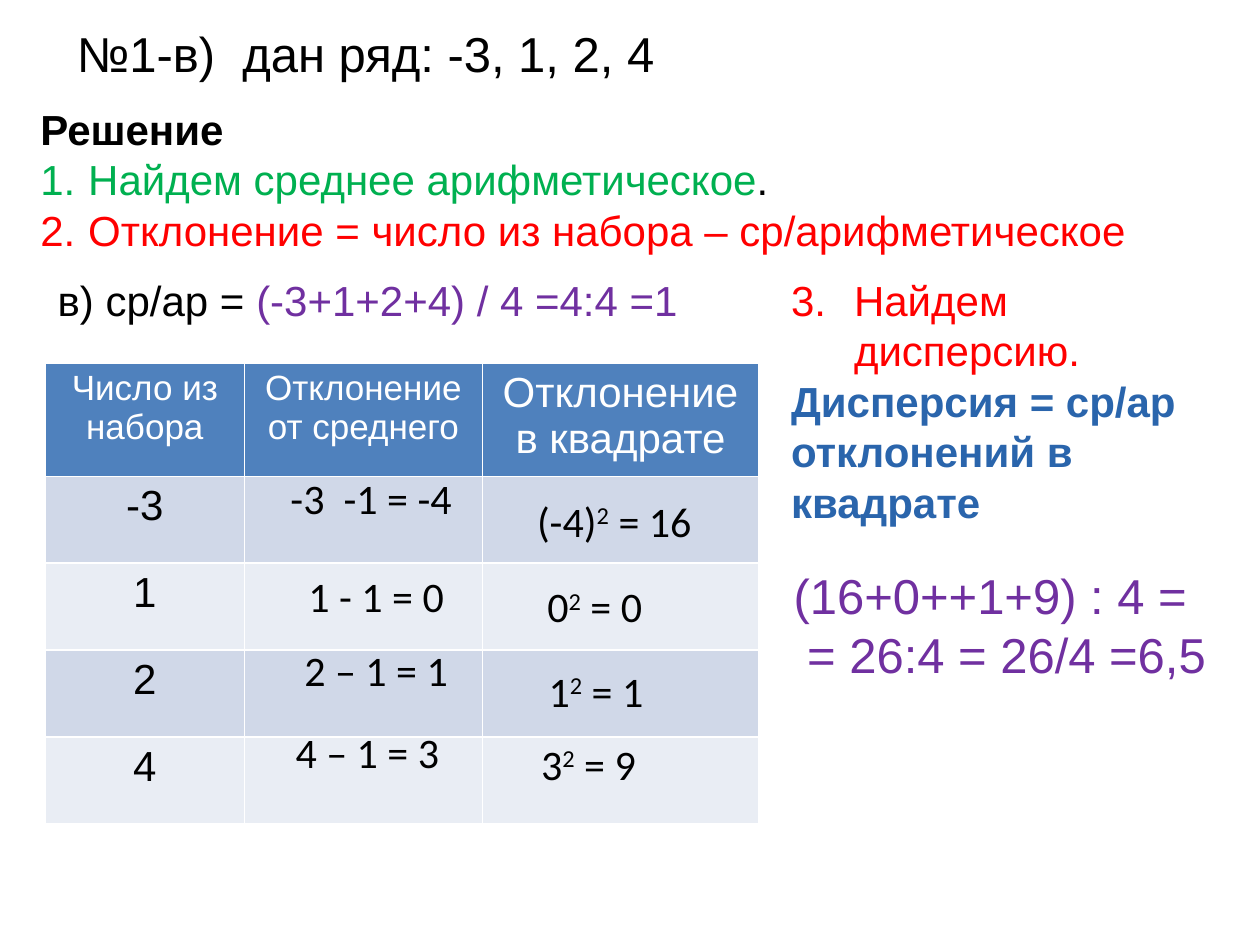
"""Build a slide that works out the variance of a short number series."""
from pptx import Presentation, util as u
from pptx.dml.color import RGBColor
from pptx.enum import text
from pptx.oxml.ns import qn
from lxml import etree

COLORS = {
    "black": "000000", "white": "FFFFFF", "green": "00B050", "red": "FF0000",
    "purple": "7030A0", "blue": "2A65AC", "header": "4F81BD",
    "odd": "D0D8E8", "even": "E9EDF4",
}


def rgb(name):
    """Return the named colour."""
    return RGBColor.from_string(COLORS[name])


def write(paragraph, words, size=24, font="Arial", color="black", bold=False, raised=False):
    """Add a formatted run to a paragraph."""
    run = paragraph.add_run()
    run.text = words
    run.font.size = u.Pt(size)
    run.font.name = font
    run.font.bold = bold
    run.font.color.rgb = rgb(color)
    if raised:
        run._r.get_or_add_rPr().set("baseline", "30000")


def number(paragraph, indent, start=None):
    """Number a paragraph, or clear its bullet when start is None."""
    properties = paragraph._p.get_or_add_pPr()
    properties.set("marL", str(u.Inches(indent)))
    properties.set("indent", str(-u.Inches(indent)))
    if start is None:
        etree.SubElement(properties, qn("a:buNone"))
    else:
        etree.SubElement(properties, qn("a:buFont"), typeface="+mj-lt")
        etree.SubElement(properties, qn("a:buAutoNum"), type="arabicPeriod", startAt=str(start))


class Page:
    """Hold the slide and its style."""

    def __init__(self, slide):
        self.slide = slide

    def fill_frame(self, shape, lines, wrap=True, align=text.PP_ALIGN.LEFT):
        """Write lines, each a list of (words, format) runs, and return the paragraphs."""
        frame = shape.text_frame
        frame.word_wrap = wrap
        frame.auto_size = text.MSO_AUTO_SIZE.SHAPE_TO_FIT_TEXT
        frame.vertical_anchor = text.MSO_ANCHOR.TOP
        for index, runs in enumerate(lines):
            paragraph = frame.add_paragraph() if index else frame.paragraphs[0]
            paragraph.alignment = align
            paragraph.space_before = u.Pt(0)
            for words, style in runs:
                write(paragraph, words, **style)
        return frame.paragraphs

    def placeholder(self, index, box, lines):
        """Move and fill a layout placeholder."""
        shape = self.slide.placeholders[index]
        shape.left, shape.top, shape.width, shape.height = map(u.Inches, box)
        return shape, self.fill_frame(shape, lines, wrap=False)

    def label(self, box, lines, **layout):
        """Add a text box."""
        shape = self.slide.shapes.add_textbox(*map(u.Inches, box))
        return self.fill_frame(shape, lines, **layout)

    def table(self, box, widths, heights, headings, numbers):
        """Add the table of numbers with room for the calculations."""
        grid = self.slide.shapes.add_table(
            len(heights), len(widths), *map(u.Inches, box)).table
        for column, width in zip(grid.columns, widths):
            column.width = u.Inches(width)
        for row, height in zip(grid.rows, heights):
            row.height = u.Inches(height)
        for row_index, row in enumerate(grid.rows):
            shade = "header" if row_index == 0 else ("even", "odd")[row_index % 2]
            for cell in row.cells:
                cell.fill.solid()
                cell.fill.fore_color.rgb = rgb(shade)
        for column_index, (words, size) in enumerate(headings):
            self.entry(grid.cell(0, column_index), words, size=size, color="white")
        for row_index, words in enumerate(numbers, 1):
            self.entry(grid.cell(row_index, 0), words)

    def entry(self, cell, words, **style):
        """Write centred text in a cell."""
        paragraph = cell.text_frame.paragraphs[0]
        paragraph.alignment = text.PP_ALIGN.CENTER
        write(paragraph, words, **style)


def main():
    """Compose and save the slide."""
    deck = Presentation()
    deck.slide_width, deck.slide_height = u.Inches(10), u.Inches(7.5)
    page = Page(deck.slides.add_slide(deck.slide_layouts[1]))

    page.placeholder(0, (0.51, 0.14, 4.95, 0.57),
                     [[("№1-в)  дан ряд: -3, 1, 2, 4", {"size": 28})]])
    solution, steps = page.placeholder(1, (0.22, 0.77, 8.9, 1.31), [
        [("Решение", {"bold": True})],
        [("Найдем среднее арифметическое", {"color": "green"}), (".", {})],
        [("Отклонение = число из набора – ср/арифметическое", {"color": "red"})],
    ])
    solution.fill.solid()
    solution.fill.fore_color.rgb = rgb("white")
    number(steps[0], 0)
    for step in steps[1:]:
        number(step, 0.38, 1)

    page.table((0.36, 2.88, 5.66, 3.67), (1.58, 1.89, 2.19), [0.68] + [0.69] * 4,
               [("Число из набора", 20), ("Отклонение от среднего", 20),
                ("Отклонение в квадрате", 24)],
               ("-3", "1", "2", "4"))

    page.label((0.36, 2.13, 5.66, 0.5), [[
        ("в) ср/ар = ", {}), ("(-3+1+2+4) / 4 =4:4 =1", {"color": "purple"})]])

    plain = {"font": "Calibri"}
    raised = {"font": "Calibri", "raised": True}
    deviations = (
        ("-3  -1 = -4", 2.2, 3.7, 1.49, False),
        ("1 - 1 = 0", 2.24, 4.48, 1.49, True),
        ("2 – 1 = 1", 2.31, 5.07, 1.35, False),
        ("4 – 1 = 3", 2.24, 5.72, 1.35, False),
    )
    for words, left, top, width, wrap in deviations:
        page.label((left, top, width, 0.5), [[(words, plain)]],
                   wrap=wrap, align=text.PP_ALIGN.CENTER)

    squares = (
        ("(-4)", " = 16", 4.05, 3.88, 1.65, True),
        ("0", " = 0", 4.09, 4.56, 1.26, True),
        ("1", " = 1", 4.24, 5.23, 0.98, False),
        ("3", " = 9", 4.18, 5.81, 0.98, False),
    )
    for base, result, left, top, width, wrap in squares:
        page.label((left, top, width, 0.5),
                   [[(base, plain), ("2", raised), (result, plain)]],
                   wrap=wrap, align=text.PP_ALIGN.CENTER)

    variance = page.label((6.18, 2.13, 3.54, 2.12), [
        [("Найдем дисперсию.", {"color": "red"})],
        [("Дисперсия = ср/ар отклонений в квадрате", {"color": "blue", "bold": True})],
    ])
    number(variance[0], 0.5, 3)
    answer = {"size": 28, "color": "purple"}
    page.label((6.2, 4.44, 3.69, 1.04), [
        [("(16+0++1+9) : 4 =", answer)], [(" = 26:4 = 26/4 =6,5", answer)]])

    deck.save("out.pptx")


if __name__ == "__main__":
    main()
